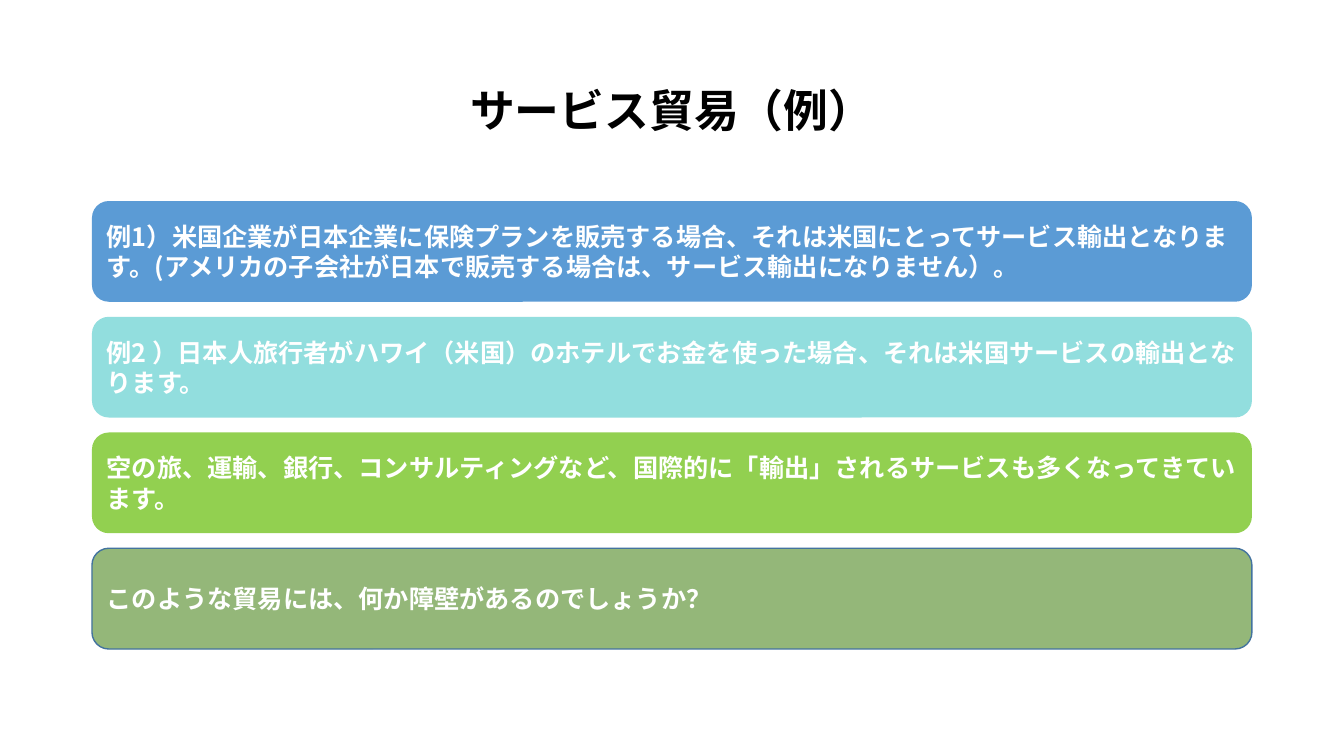
from lxml.etree import SubElement
from pptx import Presentation
from pptx.dml.color import RGBColor
from pptx.enum.shapes import MSO_SHAPE
from pptx.enum.text import MSO_ANCHOR, PP_ALIGN
from pptx.oxml.ns import qn
from pptx.util import Pt

PX = 914400 / 100.8
FONT = "Noto Sans CJK JP"
CARDS = [
    ("例1）米国企業が日本企業に保険プランを販売する場合、それは米国にとってサービス輸出となります。"
     "(アメリカの子会社が日本で販売する場合は、サービス輸出になりません）。", "5B9BD5", None),
    ("例2 ）日本人旅行者がハワイ（米国）のホテルでお金を使った場合、"
     "それは米国サービスの輸出となります。", "92DEDE", None),
    ("空の旅、運輸、銀行、コンサルティングなど、"
     "国際的に「輸出」されるサービスも多くなってきています。", "92D050", None),
    ("このような貿易には、何か障壁があるのでしょうか？", "94B779", "43739E"),
]


def px(*sizes):
    return [round(size * PX) for size in sizes]


def color(code):
    return RGBColor.from_string(code)


def write(shape, text, size, code, align):
    frame = shape.text_frame
    frame.word_wrap = True
    frame.vertical_anchor = MSO_ANCHOR.MIDDLE
    para = frame.paragraphs[0]
    para.text = text
    para.alignment = align
    font = para.font
    font.name, font.size, font.bold = FONT, Pt(size), True
    font.color.rgb = color(code)
    # East Asian glyphs take their face from a:ea
    SubElement(para._p.pPr.find(qn("a:defRPr")), qn("a:ea"), typeface=FONT)
    return para


def add_title(slide, text, left, top, width, height):
    box = slide.shapes.add_textbox(*px(left, top, width, height))
    write(box, text, 32, "000000", PP_ALIGN.CENTER).line_spacing = 0.9


def add_cards(slide, cards, left, top, width, height, gap=15):
    """Stack equal rounded cards with a fixed gap to fill the box."""
    tall = (height - gap * (len(cards) - 1)) / len(cards)
    for row, (text, fill, edge) in enumerate(cards):
        card = slide.shapes.add_shape(
            MSO_SHAPE.ROUNDED_RECTANGLE,
            *px(left, top + row * (tall + gap), width, tall))
        card.shadow.inherit = False
        card.fill.solid()
        card.fill.fore_color.rgb = color(fill)
        if edge:
            card.line.color.rgb = color(edge)
            card.line.width = Pt(1)
        else:
            card.line.fill.background()
        write(card, text, 18, "FFFFFF", PP_ALIGN.LEFT)


def main():
    deck = Presentation()
    deck.slide_width, deck.slide_height = px(1344, 756)
    slide = deck.slides.add_slide(deck.slide_layouts[6])
    add_title(slide, "サービス貿易（例）", 92, 40, 1160, 146)
    add_cards(slide, CARDS, 92, 201, 1160, 448)
    deck.save("out.pptx")


if __name__ == "__main__":
    main()
